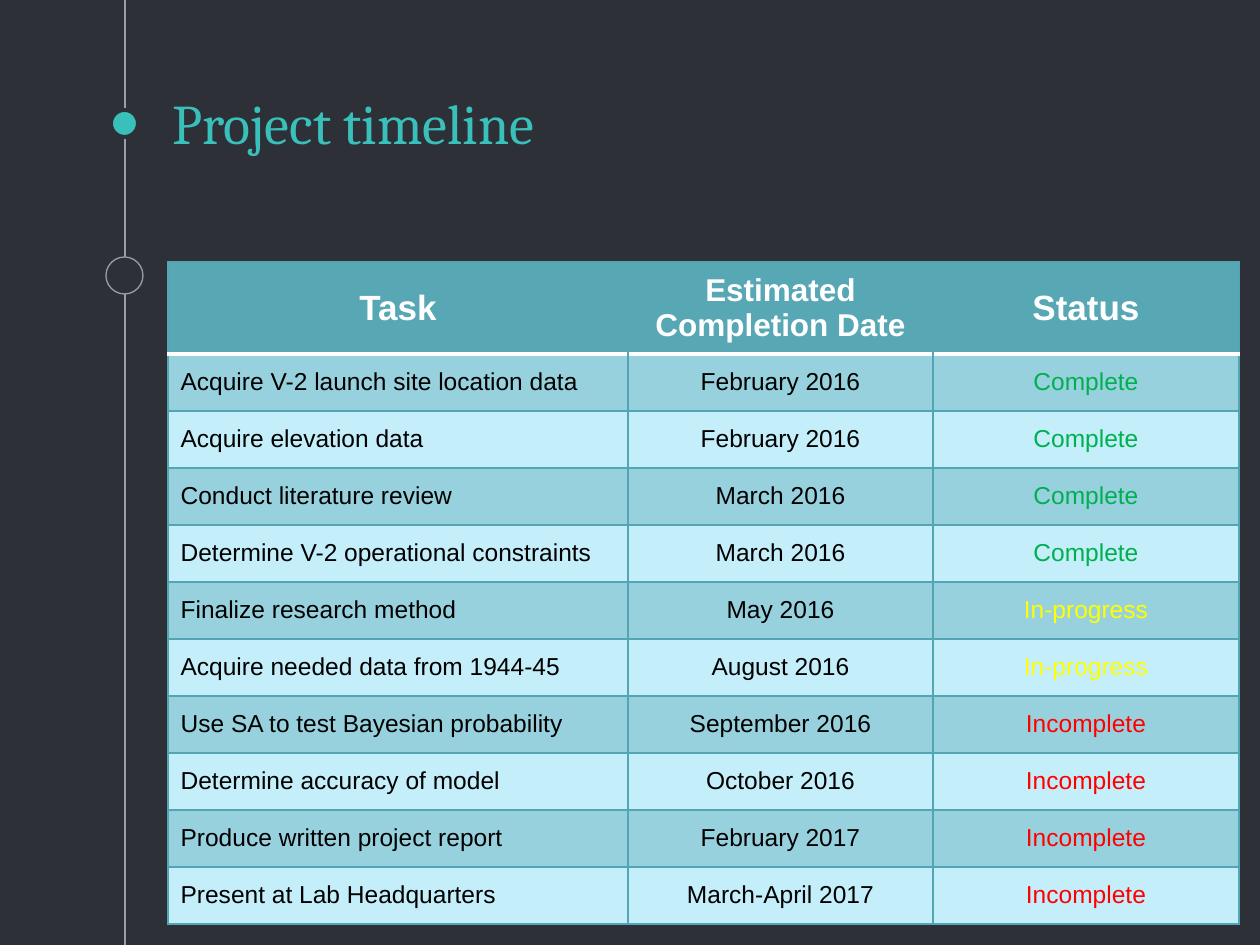
from lxml import etree
from pptx import Presentation
from pptx.dml.color import RGBColor
from pptx.enum.shapes import MSO_CONNECTOR, MSO_SHAPE
from pptx.enum.text import MSO_ANCHOR, PP_ALIGN
from pptx.oxml import parse_xml
from pptx.oxml.ns import nsdecls, qn
from pptx.util import Emu, Pt

OVAL = MSO_SHAPE.OVAL
STRAIGHT = MSO_CONNECTOR.STRAIGHT
MIDDLE, BOTTOM = MSO_ANCHOR.MIDDLE, MSO_ANCHOR.BOTTOM
LEFT, CENTER = PP_ALIGN.LEFT, PP_ALIGN.CENTER

COLORS = {
    "background": "2E3037", "rail": "999FA9", "accent": "39C0BA",
    "header": "57A7B5", "border": "53A5B3", "dark_row": "98D1DE",
    "light_row": "C4EEFA", "white": "FFFFFF", "black": "000000",
    "Complete": "00B050", "In-progress": "FFFF00", "Incomplete": "FF0000",
}
HEADERS = [("Task", 20), ("Estimated Completion Date", 18), ("Status", 20)]
TASKS = [
    ("Acquire V-2 launch site location data", "February 2016", "Complete"),
    ("Acquire elevation data", "February 2016", "Complete"),
    ("Conduct literature review", "March 2016", "Complete"),
    ("Determine V-2 operational constraints", "March 2016", "Complete"),
    ("Finalize research method", "May 2016", "In-progress"),
    ("Acquire needed data from 1944-45", "August 2016", "In-progress"),
    ("Use SA to test Bayesian probability", "September 2016", "Incomplete"),
    ("Determine accuracy of model", "October 2016", "Incomplete"),
    ("Produce written project report", "February 2017", "Incomplete"),
    ("Present at Lab Headquarters", "March-April 2017", "Incomplete"),
]
COLUMN_WIDTHS = [460, 305, 306]
HEADER_HEIGHT, ROW_HEIGHT = 92, 57


def px(n):
    return Emu(n * 914400 // 126)


def add_run(p, text, size, font, color, bold=False):
    r = p.add_run()
    r.text = text
    r.font.size = Pt(size)
    r.font.name = font
    r.font.bold = bold
    r.font.color.rgb = RGBColor.from_string(COLORS[color])


prs = Presentation()
prs.slide_width, prs.slide_height = px(1260), px(945)
s = prs.slides.add_slide(prs.slide_layouts[6])
s.background.fill.solid()
s.background.fill.fore_color.rgb = RGBColor.from_string(COLORS["background"])

rail = s.shapes.add_connector(STRAIGHT, px(125), 0, px(125), px(945))
rail.line.color.rgb = RGBColor.from_string(COLORS["rail"])
rail.line.width = Pt(0.75)
etree.SubElement(rail._element.spPr, qn("a:effectLst"))

for left, top, size, fill, line, width in [
    (111, 110, 27, "accent", "background", 2.25),
    (106, 257, 37, "background", "rail", 0.75),
]:
    sp = s.shapes.add_shape(OVAL, px(left), px(top), px(size), px(size))
    sp.shadow.inherit = False
    sp.fill.solid()
    sp.fill.fore_color.rgb = RGBColor.from_string(COLORS[fill])
    sp.line.color.rgb = RGBColor.from_string(COLORS[line])
    sp.line.width = Pt(width)

title = s.shapes.add_textbox(px(160), px(105), px(945), px(63))
tf = title.text_frame
tf.word_wrap = True
tf.vertical_anchor = BOTTOM
tf.margin_left = tf.margin_right = tf.margin_top = tf.margin_bottom = Pt(7.2)
add_run(tf.paragraphs[0], "Project timeline", 32, "Cambria", "accent")

table = s.shapes.add_table(
    len(TASKS) + 1, len(HEADERS), px(168), px(262),
    px(sum(COLUMN_WIDTHS)), px(HEADER_HEIGHT + ROW_HEIGHT * len(TASKS)),
).table
for column, width in zip(table.columns, COLUMN_WIDTHS):
    column.width = px(width)
for i, row in enumerate(table.rows):
    row.height = px(ROW_HEIGHT if i else HEADER_HEIGHT)
    for j, cell in enumerate(row.cells):
        if i == 0:
            text, size = HEADERS[j]
            color, fill = "white", "header"
        else:
            text, size = TASKS[i - 1][j], 14
            color = text if j == 2 else "black"
            fill = "dark_row" if i % 2 else "light_row"
        cell.fill.solid()
        cell.fill.fore_color.rgb = RGBColor.from_string(COLORS[fill])
        cell.vertical_anchor = MIDDLE
        p = cell.text_frame.paragraphs[0]
        p.alignment = LEFT if i and j == 0 else CENTER
        add_run(p, text, size, "Arial", color, i == 0)

        tcPr = cell._tc.get_or_add_tcPr()
        for k, side in enumerate("LRTB"):
            under_header = (i, side) in [(0, "B"), (1, "T")]
            line, width = ("white", 2) if under_header else ("border", 0.75)
            if i == 0 and (side, j) in [("L", 1), ("L", 2), ("R", 0), ("R", 1)]:
                line = "header"
            tcPr.insert(k, parse_xml(
                f'<a:ln{side} {nsdecls("a")} w="{Pt(width)}"><a:solidFill>'
                f'<a:srgbClr val="{COLORS[line]}"/></a:solidFill></a:ln{side}>'))

prs.save("out.pptx")
